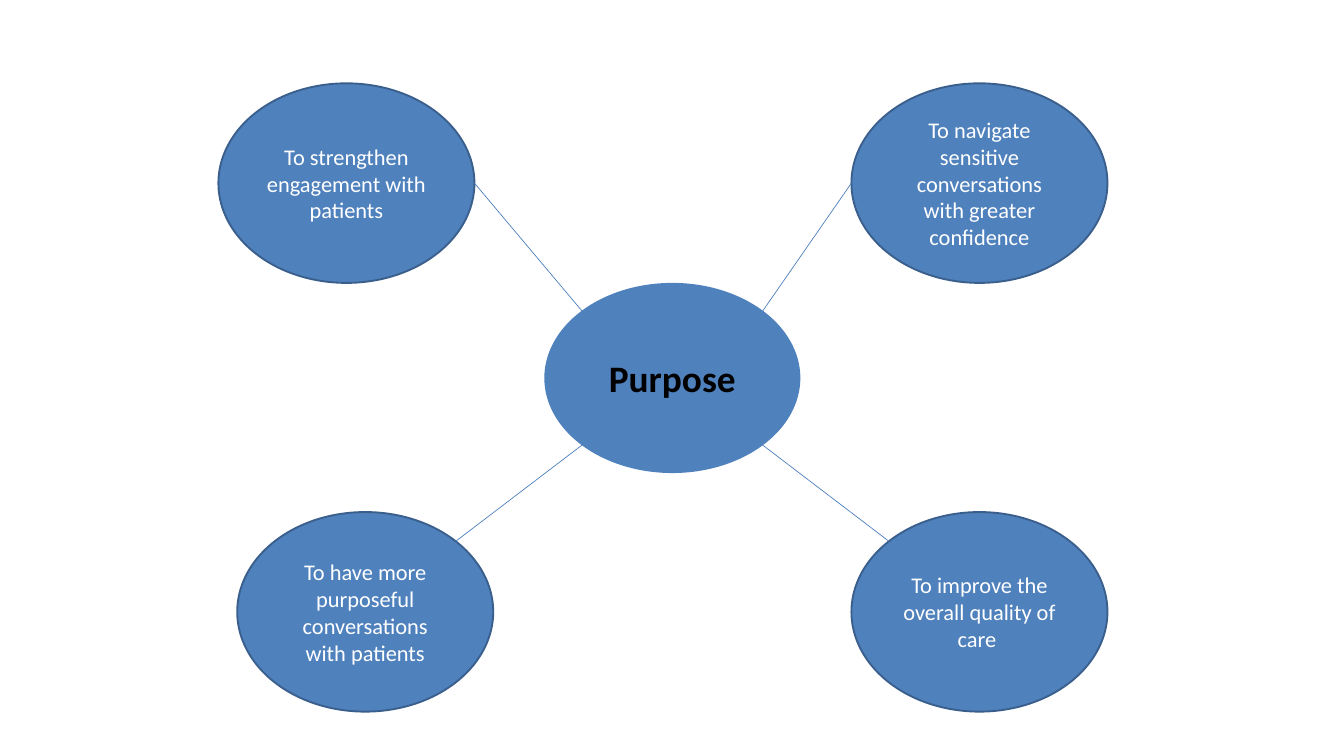
from math import cos, radians, sin

from lxml.etree import SubElement
from pptx import Presentation
from pptx.dml.color import RGBColor
from pptx.enum.shapes import MSO_CONNECTOR, MSO_SHAPE
from pptx.enum.text import MSO_ANCHOR, PP_ALIGN
from pptx.oxml.ns import qn
from pptx.util import Inches, Pt

COLORS = {
    "fill": "4F81BD",
    "outline": "3A5F8C",
    "link": "4B7EBC",
    "title": "000000",
    "label": "FFFFFF",
}
OVAL_WIDTH = 3.81
HUB = (8.1, 4.21, OVAL_WIDTH, 2.83)
GOAL_HEIGHT = 2.97
TOP_ROW, BOTTOM_ROW = 1.24, 7.62

# Text, left, top, angle of the link on the hub and on the goal
# (degrees clockwise from the right)
GOALS = [
    ("To strengthen engagement with patients", 3.25, TOP_ROW, 225, 0),
    ("To navigate sensitive conversations with greater confidence",
     12.67, TOP_ROW, 315, 180),
    ("To improve the overall quality of care ", 12.67, BOTTOM_ROW, 45, 225),
    ("To have more purposeful conversations with patients",
     3.53, BOTTOM_ROW, 135, 315),
]


def color(name):
    return RGBColor.from_string(COLORS[name])


def add_oval(slide, box, text, size, text_color, bold=False, outlined=True):
    sp = slide.shapes.add_shape(MSO_SHAPE.OVAL, *map(Inches, box))
    sp.shadow.inherit = False
    sp.fill.solid()
    sp.fill.fore_color.rgb = color("fill")
    if outlined:
        sp.line.color.rgb = color("outline")
        sp.line.width = Pt(2)
    else:
        sp.line.fill.background()
    tf = sp.text_frame
    tf.word_wrap = True
    tf.vertical_anchor = MSO_ANCHOR.MIDDLE
    p = tf.paragraphs[0]
    p.text = text
    p.alignment = PP_ALIGN.CENTER
    p.font.name = "Calibri"
    p.font.size = Pt(size)
    p.font.bold = bold
    p.font.color.rgb = color(text_color)


def rim_point(box, angle):
    """Return the point on an oval's edge at the given angle."""
    left, top, width, height = box
    a = radians(angle)
    return (Inches(left + width / 2 * (1 + cos(a))),
            Inches(top + height / 2 * (1 + sin(a))))


def add_link(slide, start, end):
    line = slide.shapes.add_connector(MSO_CONNECTOR.STRAIGHT, *start, *end)
    line.line.color.rgb = color("link")
    line.line.width = Pt(0.75)
    SubElement(line._element.spPr, qn("a:effectLst"))


def main():
    prs = Presentation()
    prs.slide_width, prs.slide_height = Inches(20), Inches(11.25)
    s = prs.slides.add_slide(prs.slide_layouts[6])

    # Central purpose
    add_oval(s, HUB, "Purpose", 40, "title", bold=True, outlined=False)

    # Goals, each linked to the centre
    for text, left, top, hub_angle, goal_angle in GOALS:
        box = (left, top, OVAL_WIDTH, GOAL_HEIGHT)
        add_oval(s, box, text, 24, "label")
        add_link(s, rim_point(HUB, hub_angle), rim_point(box, goal_angle))

    prs.save("out.pptx")


if __name__ == "__main__":
    main()
